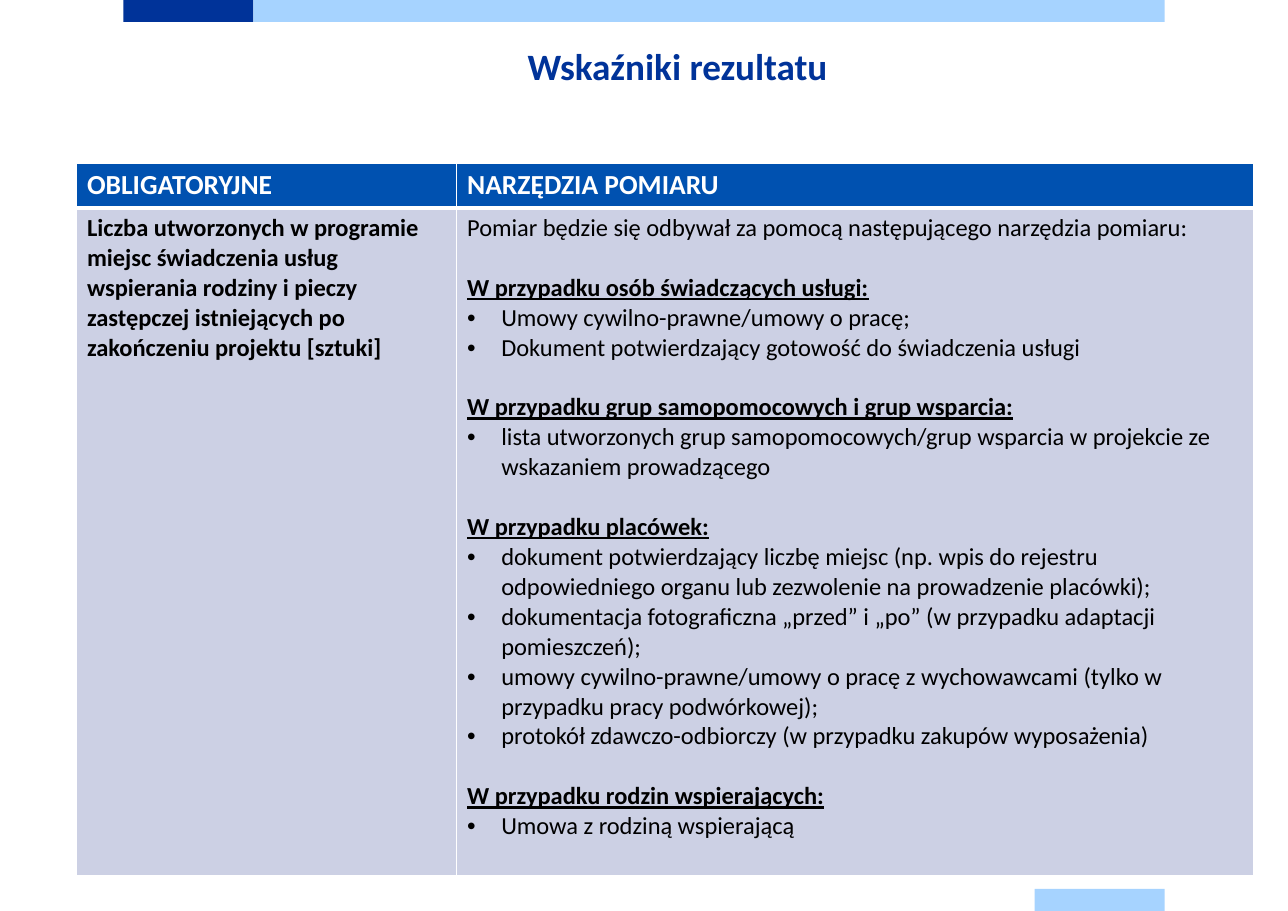
from dataclasses import dataclass

from lxml import etree
from pptx import Presentation
from pptx.dml.color import RGBColor
from pptx.enum.shapes import MSO_SHAPE
from pptx.enum.text import MSO_ANCHOR, PP_ALIGN
from pptx.oxml.ns import qn
from pptx.util import Inches, Pt

RECTANGLE = MSO_SHAPE.RECTANGLE
TOP = MSO_ANCHOR.TOP
CENTER = PP_ALIGN.CENTER

FONT = "Calibri"
NAVY, SKY, BLUE = "003399", "A6D3FF", "0051B0"
LAVENDER, WHITE, BLACK = "CCD0E4", "FFFFFF", "000000"
BODY_SIZE = 16
GROUP_GAP = 19.5


@dataclass
class Bar:
    left: float
    top: float
    width: float
    color: str


@dataclass
class Group:
    heading: str
    items: list[str]


BARS = [
    Bar(1.12, 0, 1.18, NAVY),
    Bar(2.3, 0, 8.27, SKY),
    Bar(9.39, 8.07, 1.18, SKY),
]
HEADERS = ["OBLIGATORYJNE", "NARZĘDZIA POMIARU"]
INDICATOR = (
    "Liczba utworzonych w programie miejsc świadczenia usług wspierania rodziny "
    "i pieczy zastępczej istniejących po zakończeniu projektu [sztuki]"
)
INTRODUCTION = "Pomiar będzie się odbywał za pomocą następującego narzędzia pomiaru:"
GROUPS = [
    Group("W przypadku osób świadczących usługi:", [
        "Umowy cywilno-prawne/umowy o pracę;",
        "Dokument potwierdzający gotowość do świadczenia usługi",
    ]),
    Group("W przypadku grup samopomocowych i grup wsparcia:", [
        "lista utworzonych grup samopomocowych/grup wsparcia w projekcie "
        "ze wskazaniem prowadzącego",
    ]),
    Group("W przypadku placówek:", [
        "dokument potwierdzający liczbę miejsc (np. wpis do rejestru "
        "odpowiedniego organu lub zezwolenie na prowadzenie placówki);",
        "dokumentacja fotograficzna „przed” i „po” (w przypadku adaptacji pomieszczeń);",
        "umowy cywilno-prawne/umowy o pracę z wychowawcami "
        "(tylko w przypadku pracy podwórkowej);",
        "protokół zdawczo-odbiorczy (w przypadku zakupów wyposażenia)",
    ]),
    Group("W przypadku rodzin wspierających:", ["Umowa z rodziną wspierającą"]),
]


def rgb(color: str) -> RGBColor:
    return RGBColor.from_string(color)


def format_text(paragraph, size: float, color: str,
                bold: bool = False, underline: bool = False) -> None:
    for run in paragraph.runs:
        font = run.font
        font.name = FONT
        font.size = Pt(size)
        font.color.rgb = rgb(color)
        font.bold = bold
        font.underline = underline


def add_bullet(paragraph) -> None:
    properties = paragraph._p.get_or_add_pPr()
    properties.set("marL", str(Inches(0.31)))
    properties.set("indent", str(Inches(-0.31)))
    etree.SubElement(properties, qn("a:buFont"), typeface="Arial")
    etree.SubElement(properties, qn("a:buChar"), char="•")


def style_cell(cell, fill: str, bottom_width: float) -> None:
    """Give the cell white borders and then its fill, in schema order."""
    properties = cell._tc.get_or_add_tcPr()
    widths = {"a:lnL": 1, "a:lnR": 1, "a:lnT": 1, "a:lnB": bottom_width}
    for tag, width in widths.items():
        line = etree.SubElement(properties, qn(tag), w=str(Pt(width)))
        solid = etree.SubElement(line, qn("a:solidFill"))
        etree.SubElement(solid, qn("a:srgbClr"), val=WHITE)
    cell.fill.solid()
    cell.fill.fore_color.rgb = rgb(fill)


def add_bar(slide, bar: Bar) -> None:
    shape = slide.shapes.add_shape(
        RECTANGLE, Inches(bar.left), Inches(bar.top), Inches(bar.width), Inches(0.2))
    shape.shadow.inherit = False
    shape.fill.solid()
    shape.fill.fore_color.rgb = rgb(bar.color)
    shape.line.fill.background()


def set_title(slide) -> None:
    title = slide.shapes.title
    title.left, title.top = Inches(0.86), Inches(0.3)
    title.width, title.height = Inches(10.58), Inches(0.76)
    frame = title.text_frame
    frame.margin_left = frame.margin_right = frame.margin_top = frame.margin_bottom = 0
    frame.vertical_anchor = TOP
    frame.text = "Wskaźniki rezultatu"
    paragraph = frame.paragraphs[0]
    paragraph.alignment = CENTER
    paragraph.line_spacing = Pt(36)
    format_text(paragraph, 24.3, NAVY, bold=True)


def fill_measurement(text_frame) -> None:
    text_frame.text = INTRODUCTION
    format_text(text_frame.paragraphs[0], BODY_SIZE, BLACK)
    for group in GROUPS:
        heading = text_frame.add_paragraph()
        heading.text = group.heading
        heading.space_before = Pt(GROUP_GAP)
        format_text(heading, BODY_SIZE, BLACK, bold=True, underline=True)
        for item in group.items:
            paragraph = text_frame.add_paragraph()
            paragraph.text = item
            add_bullet(paragraph)
            format_text(paragraph, BODY_SIZE, BLACK)


def add_indicator_table(slide) -> None:
    table = slide.shapes.add_table(
        2, 2, Inches(0.69), Inches(1.48), Inches(10.69), Inches(6.46)).table
    for column, width in zip(table.columns, (3.45, 7.24)):
        column.width = Inches(width)
    for row, height in zip(table.rows, (0.4, 6.06)):
        row.height = Inches(height)
    for index, header in enumerate(HEADERS):
        cell = table.cell(0, index)
        style_cell(cell, BLUE, 3)
        cell.text_frame.text = header
        format_text(cell.text_frame.paragraphs[0], 18, WHITE, bold=True)
        style_cell(table.cell(1, index), LAVENDER, 1)
    indicator = table.cell(1, 0).text_frame
    indicator.text = INDICATOR
    format_text(indicator.paragraphs[0], BODY_SIZE, BLACK, bold=True)
    fill_measurement(table.cell(1, 1).text_frame)


def main() -> None:
    presentation = Presentation()
    presentation.slide_width = Inches(11.69)
    presentation.slide_height = Inches(8.27)
    slide = presentation.slides.add_slide(presentation.slide_layouts[5])
    for bar in BARS:
        add_bar(slide, bar)
    add_indicator_table(slide)
    set_title(slide)
    presentation.save("out.pptx")


if __name__ == "__main__":
    main()
